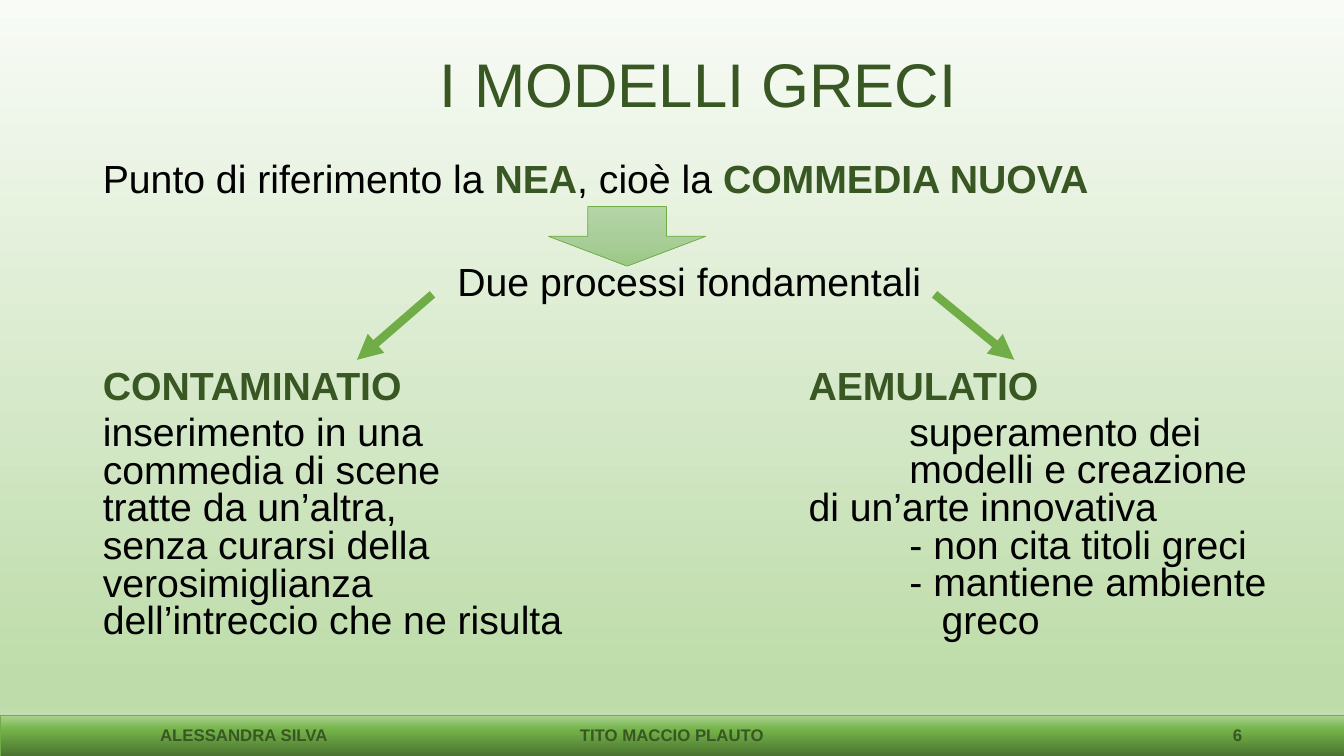
from dataclasses import dataclass

from lxml.etree import SubElement
from pptx import Presentation
from pptx.dml.color import RGBColor
from pptx.enum.shapes import MSO_CONNECTOR, MSO_SHAPE
from pptx.enum.text import MSO_ANCHOR, MSO_AUTO_SIZE, PP_ALIGN
from pptx.oxml.ns import qn
from pptx.util import Inches, Pt


@dataclass(frozen=True)
class Theme:
    """Colours, font and type sizes of the slide."""
    font: str = "Arial"
    dark: str = "385723"
    ink: str = "000000"
    accent: str = "70AD47"
    title: int = 44
    body: int = 28
    footer: int = 12
    spacing: float = 0.8
    page: tuple = ((0, "F8FBF6"), (90, "BEDCAA"), (93, "BEDCAA"), (100, "D4E8C6"))
    band: tuple = ((0, "4B7430"), (66, "74B349"), (100, "A9D18E"))
    arrow: tuple = ((0, "B5D5A7"), (50, "AACE9A"), (100, "9CC987"))


THEME = Theme()
WIDTH, HEIGHT = Inches(13.33), Inches(7.5)
CONTAMINATIO = (
    ("inserimento in una", 0),
    ("commedia di scene", 0),
    ("tratte da un’altra,", 0),
    ("senza curarsi della", 0),
    ("verosimiglianza", 0),
    ("dell’intreccio che ne risulta", 0),
)
AEMULATIO = (
    ("superamento dei", 1),
    ("modelli e creazione", 1),
    ("di un’arte innovativa", 0),
    ("- non cita titoli greci", 1),
    ("- mantiene ambiente", 1),
    ("greco", 1.32),
)


def at(*shares):
    """Turn percentages of the slide into lengths, across and down in turn."""
    return [int(share * (HEIGHT if i % 2 else WIDTH) / 100)
            for i, share in enumerate(shares)]


def apply(target, formats):
    """Set each attribute named in formats on the target."""
    for name, value in formats.items():
        setattr(target, name, value)


def paint_gradient(fill, owner, stops, angle):
    """Fill the owner with a linear gradient."""
    fill.gradient()
    gradient = owner.find(".//" + qn("a:gradFill"))
    for child in list(gradient):
        gradient.remove(child)
    stop_list = SubElement(gradient, qn("a:gsLst"))
    for position, colour in stops:
        stop = SubElement(stop_list, qn("a:gs"), pos=str(position * 1000))
        SubElement(stop, qn("a:srgbClr"), val=colour)
    SubElement(gradient, qn("a:lin"), ang=str(angle * 60000), scaled="0")


def add_block(slide, preset, shares, stops, angle):
    """Add a gradient shape with a thin outline."""
    block = slide.shapes.add_shape(preset, *at(*shares))
    block.shadow.inherit = False
    paint_gradient(block.fill, block._element, stops, angle)
    block.line.color.rgb = RGBColor.from_string(THEME.accent)
    block.line.width = Pt(0.5)


def add_arrow(slide, start, end):
    """Add a thick arrow between two points."""
    arrow = slide.shapes.add_connector(
        MSO_CONNECTOR.STRAIGHT, *at(*start), *at(*end))
    arrow.line.color.rgb = RGBColor.from_string(THEME.accent)
    arrow.line.width = Pt(6)
    SubElement(arrow.line._get_or_add_ln(), qn("a:tailEnd"), type="triangle")
    SubElement(arrow._element.spPr, qn("a:effectLst"))


def add_run(paragraph, words, size, colour, bold=False):
    """Append a formatted run."""
    run = paragraph.add_run()
    run.text = words
    apply(run.font, {"name": THEME.font, "size": Pt(size), "bold": bold})
    run.font.color.rgb = RGBColor.from_string(colour)


def place(box, shares, anchor):
    """Position a text shape and return its frame."""
    apply(box, dict(zip(("left", "top", "width", "height"), at(*shares))))
    apply(box.text_frame, {"word_wrap": True, "auto_size": MSO_AUTO_SIZE.NONE,
                           "vertical_anchor": anchor})
    return box.text_frame


def add_line(frame, runs, align=PP_ALIGN.JUSTIFY, before=0, after=0, indent=0):
    """Add an unbulleted body line of (words, emphasised) runs."""
    first = frame.paragraphs[0]
    paragraph = frame.add_paragraph() if first.runs else first
    apply(paragraph, {"alignment": align, "line_spacing": THEME.spacing,
                      "space_before": Pt(before), "space_after": Pt(after)})
    properties = paragraph._p.get_or_add_pPr()
    properties.set("marL", str(int(Inches(indent))))
    properties.set("indent", "0")
    SubElement(properties, qn("a:buNone"))
    for words, emphasised in runs:
        add_run(paragraph, words, THEME.body,
                THEME.dark if emphasised else THEME.ink, emphasised)


def add_process(frame, name, lines, before=0):
    """Add a process name and the lines that explain it."""
    add_line(frame, ((name, True),), before=before, after=6)
    for words, indent in lines:
        add_line(frame, ((words, False),), indent=indent)


def add_title(slide):
    """Fill the title placeholder."""
    frame = place(slide.shapes.title, (10.8, 4.4, 82.37, 14.4), MSO_ANCHOR.MIDDLE)
    heading = frame.paragraphs[0]
    apply(heading, {"alignment": PP_ALIGN.CENTER, "line_spacing": 0.9})
    add_run(heading, "I MODELLI GRECI", THEME.title, THEME.dark)


def add_body(slide):
    """Fill the two body placeholders with the models and the processes."""
    models, rivalry = slide.placeholders[1], slide.placeholders[2]
    frame = place(models, (6.9, 20.93, 88.75, 69.2), MSO_ANCHOR.TOP)
    add_line(frame, (("Punto di riferimento la ", False), ("NEA", True),
                     (", cioè la ", False), ("COMMEDIA NUOVA", True)))
    add_line(frame, (("Due processi fondamentali", False),), PP_ALIGN.CENTER, before=47)
    add_process(frame, "CONTAMINATIO", CONTAMINATIO, before=47)
    frame = place(rivalry, (59.41, 48.27, 36.24, 41.86), MSO_ANCHOR.TOP)
    add_process(frame, "AEMULATIO", AEMULATIO)


def add_footer(slide, words, left, width, align):
    """Add one entry of the footer band."""
    shares = (left, 95.87, width, 2.67)
    frame = place(slide.shapes.add_textbox(*at(*shares)), shares, MSO_ANCHOR.MIDDLE)
    entry = frame.paragraphs[0]
    entry.alignment = align
    add_run(entry, words, THEME.footer, THEME.dark, True)


def main():
    """Build and save the slide."""
    deck = Presentation()
    apply(deck, {"slide_width": WIDTH, "slide_height": HEIGHT})
    slide = deck.slides.add_slide(deck.slide_layouts[3])
    paint_gradient(slide.background.fill, slide._element, THEME.page, 90)
    add_block(slide, MSO_SHAPE.RECTANGLE, (0, 94.67, 100, 5.33), THEME.band, 270)
    add_title(slide)
    add_body(slide)
    add_footer(slide, "ALESSANDRA SILVA", 6.9, 22.5, PP_ALIGN.CENTER)
    add_footer(slide, "TITO MACCIO PLAUTO", 33.08, 33.83, PP_ALIGN.CENTER)
    add_footer(slide, "6", 71.27, 21.9, PP_ALIGN.RIGHT)
    add_block(slide, MSO_SHAPE.DOWN_ARROW, (40.81, 27.33, 11.7, 7.87), THEME.arrow, 90)
    add_arrow(slide, (32.18, 38.93), (26.56, 47.6))
    add_arrow(slide, (69.54, 38.93), (75.47, 47.6))
    deck.save("out.pptx")


if __name__ == "__main__":
    main()
